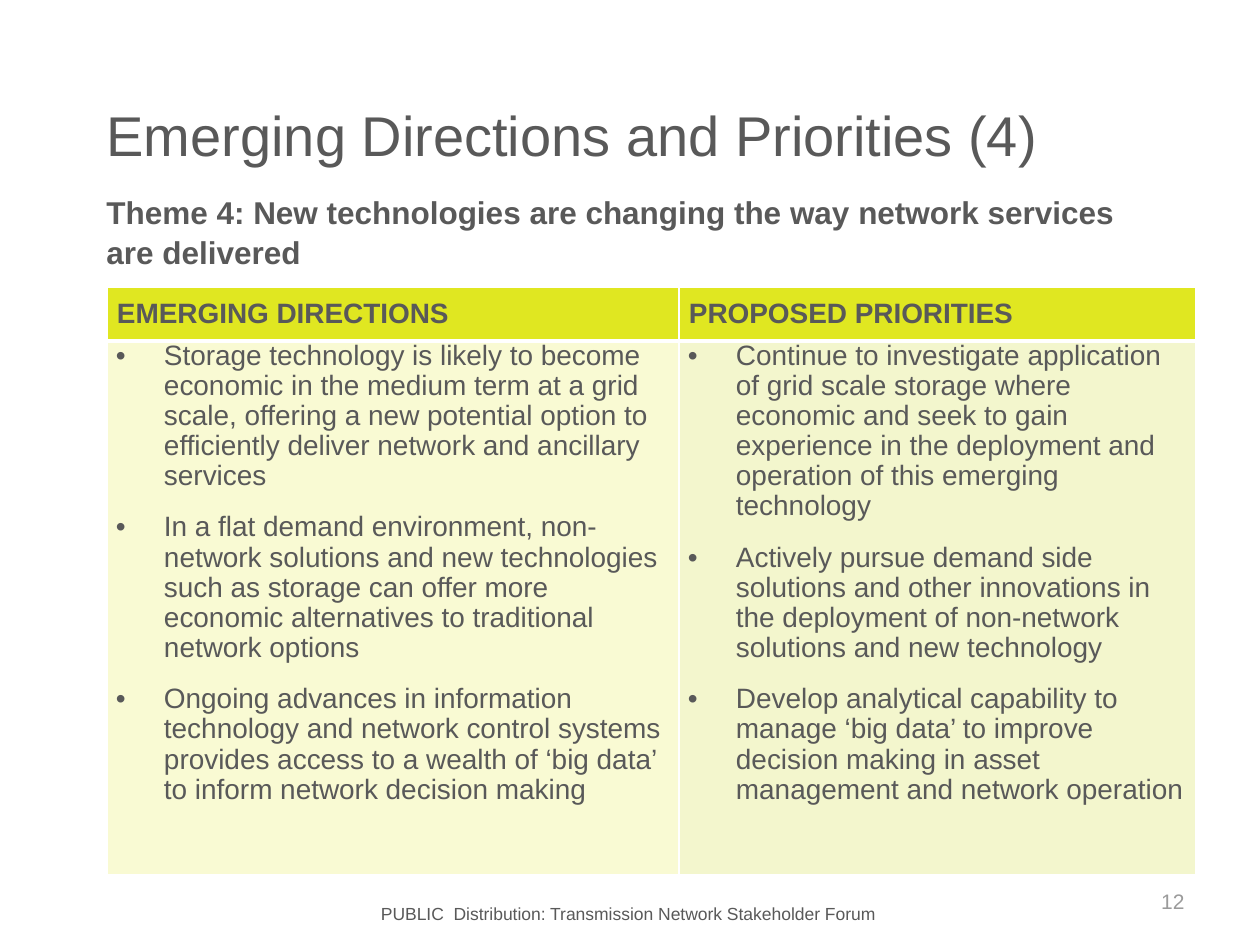
from dataclasses import dataclass

from lxml.etree import SubElement
from pptx import Presentation
from pptx.dml.color import RGBColor
from pptx.enum.text import MSO_ANCHOR as Anchor, MSO_AUTO_SIZE as AutoSize, PP_ALIGN as Align
from pptx.oxml.ns import qn
from pptx.util import Emu, Pt

PX_PER_INCH = 126
FONT = "Arial"
GREY = RGBColor(0x59, 0x59, 0x59)
PALE_GREY = RGBColor(0x9B, 0x9B, 0x9B)
LIME = RGBColor(0xE0, 0xE7, 0x21)
CREAM = RGBColor(0xF9, 0xFA, 0xD3)
PALE_GREEN = RGBColor(0xF3, 0xF6, 0xCD)
WHITE = RGBColor(0xFF, 0xFF, 0xFF)

HEADER_INSET = 10
BODY_INSET = 9
BULLET_INDENT = 48
ROW_HEIGHTS = (54, 534)


@dataclass(frozen=True)
class Label:
    text: str
    left: int
    top: int
    width: int
    height: int
    size: int
    align: Align = Align.LEFT
    anchor: Anchor = Anchor.TOP
    color: RGBColor = GREY
    bold: bool = False
    line_spacing: float = 1.0


@dataclass(frozen=True)
class Column:
    heading: str
    width: int
    fill: RGBColor
    points: tuple[str, ...]


TITLE = Label("Emerging Directions and Priorities (4)", 94, 67, 1129, 135, 32,
              anchor=Anchor.MIDDLE)
LABELS = (
    Label("PUBLIC  Distribution: Transmission Network Stakeholder Forum",
          281, 897, 694, 34, 10, align=Align.CENTER),
    Label("12", 903, 876, 294, 50, 12, align=Align.RIGHT, anchor=Anchor.MIDDLE,
          color=PALE_GREY),
    Label("Theme 4: New technologies are changing the way network services are delivered",
          94, 185, 1084, 89, 18, bold=True, line_spacing=1.05),
)
COLUMNS = (
    Column("EMERGING DIRECTIONS", 572, CREAM, (
        "Storage technology is likely to become economic in the medium term at a grid scale, "
        "offering a new potential option to efficiently deliver network and ancillary services",
        "In a flat demand environment, non-network solutions and new technologies such as "
        "storage can offer more economic alternatives to traditional network options",
        "Ongoing advances in information technology and network control systems provides "
        "access to a wealth of ‘big data’ to inform network decision making",
    )),
    Column("PROPOSED PRIORITIES", 517, PALE_GREEN, (
        "Continue to investigate application of grid scale storage where economic and seek to "
        "gain experience in the deployment and operation of this emerging technology",
        "Actively pursue demand side solutions and other innovations in the deployment of "
        "non-network solutions and new technology",
        "Develop analytical capability to manage ‘big data’ to improve decision making in "
        "asset management and network operation",
    )),
)


def px(length: int) -> Emu:
    return Emu(round(length * 914400 / PX_PER_INCH))


def style_font(para, size: int, color: RGBColor = GREY, bold: bool = False) -> None:
    font = para.font
    font.name, font.size, font.bold = FONT, Pt(size), bold
    font.color.rgb = color


def fill_label(box, label: Label) -> None:
    box.left, box.top = px(label.left), px(label.top)
    box.width, box.height = px(label.width), px(label.height)
    frame = box.text_frame
    frame.word_wrap = True
    frame.auto_size = AutoSize.NONE
    frame.vertical_anchor = label.anchor
    para = frame.paragraphs[0]
    para.text = label.text
    para.alignment = label.align
    para.line_spacing = label.line_spacing
    style_font(para, label.size, label.color, label.bold)


def add_border(cell, side: str, points: int) -> None:
    properties = cell._tc.get_or_add_tcPr()
    line = SubElement(properties, qn(f"a:ln{side}"), w=str(Pt(points)))
    solid = SubElement(line, qn("a:solidFill"))
    SubElement(solid, qn("a:srgbClr"), val=str(WHITE))


def style_cell(cell, fill: RGBColor, inset: int, thick_side: str) -> None:
    for side in "LRTB":
        add_border(cell, side, 3 if side == thick_side else 1)
    cell.fill.solid()
    cell.fill.fore_color.rgb = fill
    cell.margin_left = cell.margin_right = px(inset)
    cell.margin_top = cell.margin_bottom = 0


def add_bullet(para) -> None:
    properties = para._p.get_or_add_pPr()
    properties.set("marL", str(px(BULLET_INDENT)))
    properties.set("indent", str(-px(BULLET_INDENT)))
    SubElement(properties, qn("a:buFont"), typeface=FONT)
    SubElement(properties, qn("a:buChar"), char="•")


def fill_column(header, body, column: Column) -> None:
    style_cell(header, LIME, HEADER_INSET, thick_side="B")
    header.vertical_anchor = Anchor.MIDDLE
    header.text = column.heading
    style_font(header.text_frame.paragraphs[0], 16, bold=True)

    style_cell(body, column.fill, BODY_INSET, thick_side="T")
    body.vertical_anchor = Anchor.TOP
    frame = body.text_frame
    for index, point in enumerate(column.points):
        para = frame.add_paragraph() if index else frame.paragraphs[0]
        para.text = point
        add_bullet(para)
        para.line_spacing = 0.97
        para.space_before = Pt(6 if index else 0)
        para.space_after = Pt(6)
        style_font(para, 16)


def add_priorities_table(slide) -> None:
    width = sum(column.width for column in COLUMNS)
    table = slide.shapes.add_table(len(ROW_HEIGHTS), len(COLUMNS), px(107), px(287),
                                   px(width), px(sum(ROW_HEIGHTS))).table
    for row, height in zip(table.rows, ROW_HEIGHTS):
        row.height = px(height)
    for index, column in enumerate(COLUMNS):
        table.columns[index].width = px(column.width)
        fill_column(table.cell(0, index), table.cell(1, index), column)


def main() -> None:
    deck = Presentation()
    deck.slide_width, deck.slide_height = px(1260), px(945)
    slide = deck.slides.add_slide(deck.slide_layouts[5])
    fill_label(slide.shapes.title, TITLE)
    for label in LABELS:
        fill_label(slide.shapes.add_textbox(0, 0, 0, 0), label)
    add_priorities_table(slide)
    deck.save("out.pptx")


if __name__ == "__main__":
    main()
